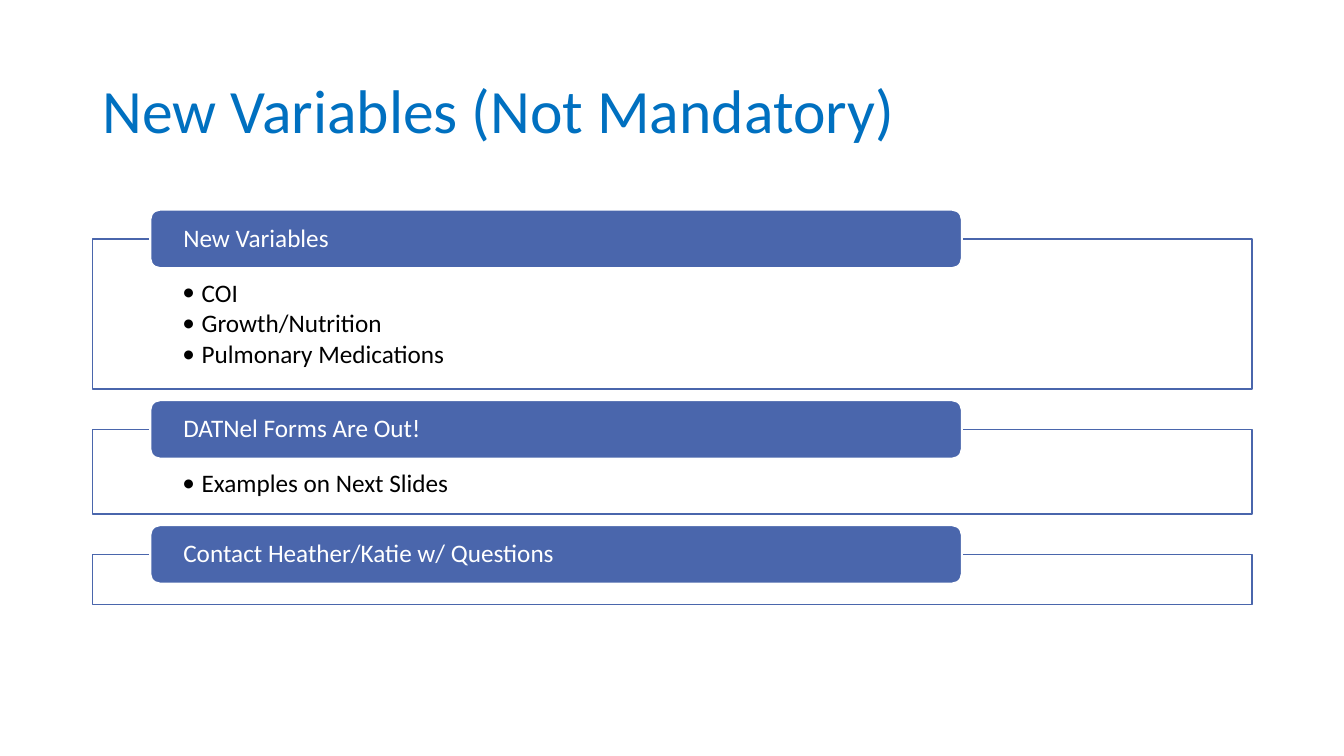
from lxml import etree
from pptx import Presentation
from pptx import util as u
from pptx.dml.color import RGBColor
from pptx.enum import shapes, text
from pptx.oxml import ns

THEME = {
    "font": "Calibri",
    "title": {"color": RGBColor(0x00, 0x70, 0xC0), "size": u.Pt(44)},
    "heading": {"color": RGBColor(0xFF, 0xFF, 0xFF), "size": u.Pt(18)},
    "bullet": {"color": RGBColor(0x00, 0x00, 0x00), "size": u.Pt(18)},
    "accent": RGBColor(0x4A, 0x66, 0xAC),
    "paper": RGBColor(0xFF, 0xFF, 0xFF),
}

SECTIONS = [
    ("New Variables", ["COI", "Growth/Nutrition", "Pulmonary Medications"], 1.49),
    ("DATNel Forms Are Out!", ["Examples on Next Slides"], 0.84),
    ("Contact Heather/Katie w/ Questions", [], 0.5),
]
LEFT, WIDTH = 0.92, 11.5
TAB_LEFT, TAB_WIDTH, TAB_HEIGHT = 1.49, 8.05, 0.58
FIRST_TAB_TOP, GAP = 2.08, 0.11


def write(holder, lines, role, anchor, insets):
    frame = holder.text_frame
    left, top, right, bottom = map(u.Inches, insets)
    layout = {"word_wrap": True, "vertical_anchor": anchor, "margin_left": left,
              "margin_top": top, "margin_right": right, "margin_bottom": bottom}
    for name, value in layout.items():
        setattr(frame, name, value)
    for index, line in enumerate(lines):
        paragraph = frame.paragraphs[0] if index == 0 else frame.add_paragraph()
        if role == "bullet":
            paragraph.level = 1
            props = paragraph._p.get_or_add_pPr()
            props.set("marL", str(u.Inches(0.19)))
            props.set("indent", str(u.Inches(-0.19)))
            etree.SubElement(props, ns.qn("a:buFont")).set("typeface", THEME["font"])
            etree.SubElement(props, ns.qn("a:buChar")).set("char", "•")
            paragraph.space_after = u.Pt(2.7)
        paragraph.alignment = text.PP_ALIGN.LEFT
        paragraph.line_spacing = 0.9
        run = paragraph.add_run()
        run.text = line
        run.font.name = THEME["font"]
        run.font.size = THEME[role]["size"]
        run.font.color.rgb = THEME[role]["color"]


def add_block(kind, box, fill, line, line_width):
    block = slide.shapes.add_shape(kind, *map(u.Inches, box))
    block.shadow.inherit = False
    block.fill.solid()
    block.fill.fore_color.rgb = fill
    block.line.color.rgb = line
    block.line.width = u.Pt(line_width)
    return block


deck = Presentation()
deck.slide_width, deck.slide_height = u.Inches(13.33), u.Inches(7.5)
slide = deck.slides.add_slide(deck.slide_layouts[6])

title = slide.shapes.add_textbox(*map(u.Inches, (LEFT, 0.4, WIDTH, 1.45)))
write(title, ["New Variables (Not Mandatory)"], "title",
      text.MSO_ANCHOR.MIDDLE, (0.1, 0.05, 0.1, 0.05))

tab_top = FIRST_TAB_TOP
for heading, bullets, panel_height in SECTIONS:
    panel_top = tab_top + TAB_HEIGHT / 2
    panel = add_block(shapes.MSO_SHAPE.RECTANGLE, (LEFT, panel_top, WIDTH, panel_height),
                      THEME["paper"], THEME["accent"], 1)
    panel_color = panel._element.spPr.find(ns.qn("a:solidFill"))[0]
    etree.SubElement(panel_color, ns.qn("a:alpha")).set("val", "90000")
    write(panel, bullets, "bullet", text.MSO_ANCHOR.TOP, (0.89, 0.41, 0.89, 0.14))

    tab = add_block(shapes.MSO_SHAPE.ROUNDED_RECTANGLE,
                    (TAB_LEFT, tab_top, TAB_WIDTH, TAB_HEIGHT),
                    THEME["accent"], THEME["paper"], 1.5)
    write(tab, [heading], "heading", text.MSO_ANCHOR.MIDDLE, (0.3, 0, 0.3, 0))
    tab_top = panel_top + panel_height + GAP

deck.save("out.pptx")
